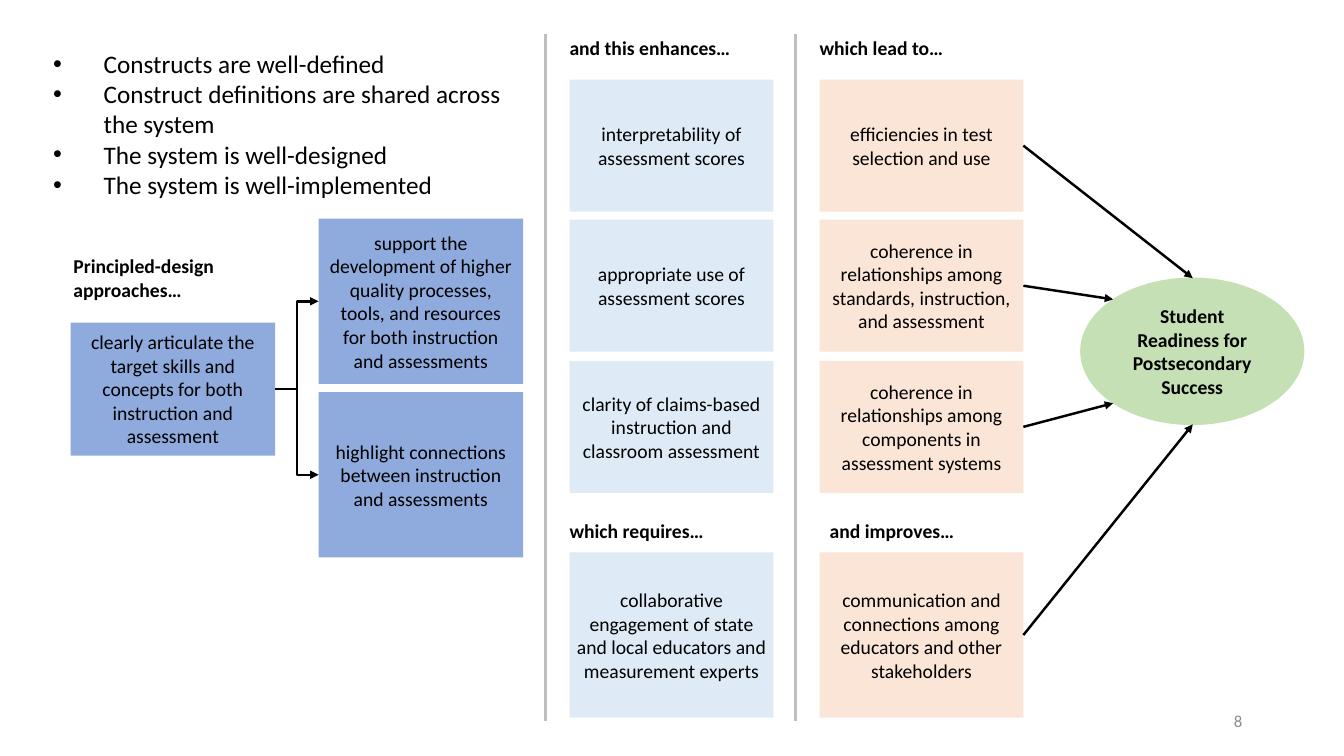
"""Build the principled-design theory of action slide."""
from typing import NamedTuple, Optional

from lxml.etree import SubElement
from pptx import Presentation
from pptx.dml.color import RGBColor
from pptx.enum.shapes import MSO_CONNECTOR as Connector, MSO_SHAPE as Preset
from pptx.enum.text import MSO_ANCHOR as Anchor, PP_ALIGN as Align
from pptx.oxml.ns import qn
from pptx.util import Inches, Pt

BLACK = RGBColor(0x00, 0x00, 0x00)
GRAY = RGBColor(0x8C, 0x8C, 0x8C)
DIVIDER = RGBColor(0xBF, 0xBF, 0xBF)
BLUE = RGBColor(0x8F, 0xAA, 0xDC)
PALE_BLUE = RGBColor(0xDE, 0xEB, 0xF7)
PEACH = RGBColor(0xFB, 0xE5, 0xD6)
GREEN = RGBColor(0xC5, 0xE0, 0xB4)
RIGHT, LEFT = 3, 1


class Box(NamedTuple):
    left: float
    top: float
    width: float
    height: float


class Heading(NamedTuple):
    text: str
    box: Box


class Column(NamedTuple):
    left: float
    fill: RGBColor
    texts: tuple[str, ...]


HEADINGS = (
    Heading("Principled-design approaches…", Box(0.63, 2.45, 2.21, 0.61)),
    Heading("and this enhances…", Box(5.55, 0.17, 2.21, 0.61)),
    Heading("which lead to…", Box(8.03, 0.17, 2.21, 0.61)),
    Heading("which requires…", Box(5.55, 5.13, 2.21, 0.27)),
    Heading("and improves…", Box(8.13, 5.13, 2.21, 0.27)),
)
SUPPORTS = (
    "support the development of higher quality processes, tools, and resources "
    "for both instruction and assessments",
    "highlight connections between instruction and assessments",
)
ENHANCES = Column(5.65, PALE_BLUE, (
    "interpretability of assessment scores",
    "appropriate use of assessment scores",
    "clarity of claims-based instruction and classroom assessment",
    "collaborative engagement of state and local educators and measurement experts",
))
LEADS_TO = Column(8.13, PEACH, (
    "efficiencies in test selection and use",
    "coherence in relationships among standards, instruction, and assessment",
    "coherence in relationships among components in assessment systems",
    "communication and connections among educators and other stakeholders",
))
ROWS = ((0.79, 1.31), (2.18, 1.31), (3.58, 1.31), (5.48, 1.64))
OUTCOME = Box(10.72, 2.76, 2.21, 1.45)
ARROW_TIPS = ((11.83, 2.76), (11.04, 2.97), (11.04, 4.0), (11.83, 4.21))
CONDITIONS = (
    "Constructs are well-defined",
    "Construct definitions are shared across the system",
    "The system is well-designed",
    "The system is well-implemented",
)


def write_text(shape, *lines: str, size: float = 14, bold: bool = False,
               color: RGBColor = BLACK, align: Align = Align.LEFT,
               anchor: Anchor = Anchor.MIDDLE, bullet: Optional[str] = None,
               side: float = 0.1, edge: float = 0.05) -> None:
    frame = shape.text_frame
    frame.word_wrap = True
    frame.vertical_anchor = anchor
    frame.margin_left = frame.margin_right = Inches(side)
    frame.margin_top = frame.margin_bottom = Inches(edge)
    for index, line in enumerate(lines):
        paragraph = frame.paragraphs[0] if index == 0 else frame.add_paragraph()
        paragraph.alignment = align
        if bullet:
            properties = paragraph._p.get_or_add_pPr()
            properties.set("marL", str(Inches(0.5)))
            properties.set("indent", str(-Inches(0.5)))
            SubElement(properties, qn("a:buFont")).set("typeface", "Arial")
            SubElement(properties, qn("a:buChar")).set("char", bullet)
        run = paragraph.add_run()
        run.text = line
        run.font.name = "Calibri"
        run.font.size = Pt(size)
        run.font.bold = bold
        run.font.color.rgb = color


def add_label(slide, box: Box, *lines: str, **text_format) -> None:
    write_text(slide.shapes.add_textbox(*map(Inches, box)), *lines, **text_format)


def add_block(slide, box: Box, text: str, fill: RGBColor,
              preset: Preset = Preset.RECTANGLE, **text_format):
    shape = slide.shapes.add_shape(preset, *map(Inches, box))
    shape.shadow.inherit = False
    shape.fill.solid()
    shape.fill.fore_color.rgb = fill
    shape.line.fill.background()
    write_text(shape, text, align=Align.CENTER, **text_format)
    return shape


def add_column(slide, column: Column) -> list:
    return [add_block(slide, Box(column.left, top, 2.02, height), text,
                      column.fill, side=0.07, edge=0.04)
            for (top, height), text in zip(ROWS, column.texts)]


def add_line(slide, start: tuple[float, float], end: tuple[float, float],
             kind: Connector = Connector.STRAIGHT, color: RGBColor = BLACK,
             width: float = 1.75, arrow: bool = True, source=None, target=None) -> None:
    connector = slide.shapes.add_connector(kind, *map(Inches, (*start, *end)))
    if source is not None:
        connector.begin_connect(source, RIGHT)
    if target is not None:
        connector.end_connect(target, LEFT)
    connector.line.color.rgb = color
    connector.line.width = Pt(width)
    if arrow:
        SubElement(connector.line._get_or_add_ln(), qn("a:tailEnd")).set("type", "triangle")
    SubElement(connector._element.spPr, qn("a:effectLst"))


def main() -> None:
    presentation = Presentation()
    presentation.slide_width = Inches(13.33)
    presentation.slide_height = Inches(7.5)
    slide = presentation.slides.add_slide(presentation.slide_layouts[6])

    for heading in HEADINGS:
        add_label(slide, heading.box, heading.text, bold=True)

    articulate = add_block(
        slide, Box(0.7, 3.2, 2.03, 1.32),
        "clearly articulate the target skills and concepts for both "
        "instruction and assessment", BLUE)
    for index, text in enumerate(SUPPORTS):
        top = 2.17 + 1.72 * index
        support = add_block(slide, Box(3.16, top, 2.03, 1.64), text, BLUE)
        add_line(slide, (2.73, 3.86), (3.16, top + 0.82), Connector.ELBOW,
                 source=articulate, target=support)

    for x in (5.41, 7.89):
        add_line(slide, (x, 0.34), (x, 7.15), color=DIVIDER, width=2.25, arrow=False)

    add_column(slide, ENHANCES)
    results = add_column(slide, LEADS_TO)
    outcome = add_block(slide, OUTCOME, "Student Readiness for Postsecondary Success",
                        GREEN, Preset.OVAL, bold=True)
    outcome.line.color.rgb = GREEN
    outcome.line.width = Pt(1)
    for result, (top, height), tip in zip(results, ROWS, ARROW_TIPS):
        add_line(slide, (10.15, top + height / 2), tip, source=result)

    add_label(slide, Box(9.42, 6.95, 3, 0.4), "8", size=12, color=GRAY, align=Align.RIGHT)
    add_label(slide, Box(0.43, 0.43, 4.7, 1.62), *CONDITIONS, size=18,
              anchor=Anchor.TOP, bullet="•")
    presentation.save("out.pptx")


if __name__ == "__main__":
    main()
